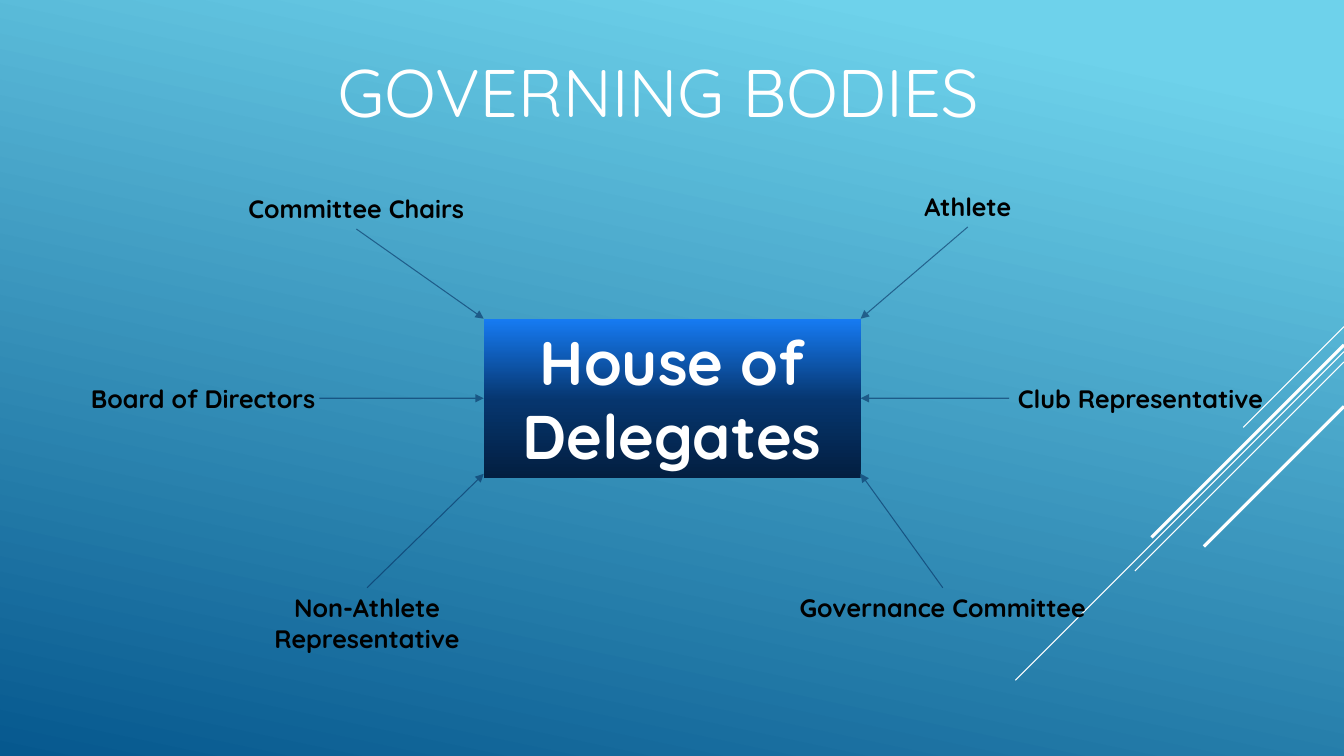
from copy import deepcopy

from pptx import Presentation
from pptx.dml.color import RGBColor
from pptx.enum import shapes, text
from pptx.oxml.ns import qn
from pptx.oxml.xmlchemy import OxmlElement
from pptx.util import Cm, Pt

FONT = "Quicksand"
WHITE = RGBColor(0xFF, 0xFF, 0xFF)
BLACK = RGBColor(0x00, 0x00, 0x00)
NAVY = RGBColor(0x05, 0x2F, 0x61)
SKY = [(0.1, RGBColor(0x6E, 0xD2, 0xEB)), (1, RGBColor(0x06, 0x58, 0x8E))]
HUB_BLUES = [(0, RGBColor(0x03, 0x1F, 0x41)), (0.48, RGBColor(0x06, 0x35, 0x6D)),
             (1, RGBColor(0x16, 0x7B, 0xF3))]
WIDTH, HEIGHT = 33.87, 19.05
LABEL_HEIGHT = 1.02
TOP, LEFT, BOTTOM, RIGHT = range(4)  # connection sites of a rectangle


def set_gradient(fill, element, stops, angle):
    """Fill with any number of (position, colour) stops; element holds the fill."""
    fill.gradient()
    fill.gradient_angle = angle
    stop_list = next(element.iter(qn("a:gsLst")))
    for _ in stops[2:]:
        stop_list.append(deepcopy(stop_list[-1]))
    for stop, (position, colour) in zip(fill.gradient_stops, stops):
        stop.position = position
        stop.color.rgb = colour


def write(tf, words, size, colour, bold=False):
    tf.word_wrap = True
    p = tf.paragraphs[0]
    p.text = words
    p.alignment = text.PP_ALIGN.CENTER
    p.font.name, p.font.size, p.font.bold = FONT, Pt(size), bold
    p.font.color.rgb = colour


def add_line(s, start, end, colour, width):
    points = [Cm(v) for v in (*start, *end)]
    line = s.shapes.add_connector(shapes.MSO_CONNECTOR.STRAIGHT, *points)
    line.line.width = Pt(width)
    line.line.color.rgb = colour
    line._element.spPr.append(OxmlElement("a:effectLst"))
    return line


def add_arrow(s, start, end):
    """Draw a 60 % opaque line with an arrowhead at its end."""
    arrow = add_line(s, start, end, NAVY, 0.75)
    ln = arrow.line._get_or_add_ln()
    alpha = OxmlElement("a:alpha")
    alpha.set("val", "60000")
    next(ln.iter(qn("a:srgbClr"))).append(alpha)
    head = OxmlElement("a:tailEnd")
    head.set("type", "triangle")
    ln.append(head)
    return arrow


def add_stripes(s, right):
    """Draw 45° stripes running down and left from the right edge."""
    for y, run, width in [(8.23, 2.54, 0.75), (8.86, 8.28, 0.75), (9.12, 5.27, 0.75),
                          (8.69, 4.85, 2.25), (10.24, 3.53, 2.25)]:
        add_line(s, (right, y), (right - run, y + run), WHITE, width)


def add_title(s, x, y, w, h):
    title = s.shapes.title
    title.left, title.top, title.width, title.height = Cm(x), Cm(y), Cm(w), Cm(h)
    title.text_frame.vertical_anchor = text.MSO_ANCHOR.MIDDLE
    write(title.text_frame, "GOVERNING BODIES", 48, WHITE)


def add_label(s, words, centre, y, w):
    label = s.shapes.add_textbox(Cm(centre - w / 2), Cm(y), Cm(w), Cm(LABEL_HEIGHT))
    write(label.text_frame, words, 18, BLACK, bold=True)
    label.text_frame.auto_size = text.MSO_AUTO_SIZE.SHAPE_TO_FIT_TEXT
    return label


def add_hub(s, x, y, w, h):
    hub = s.shapes.add_shape(shapes.MSO_SHAPE.RECTANGLE, Cm(x), Cm(y), Cm(w), Cm(h))
    hub.shadow.inherit = False
    hub.line.fill.background()
    set_gradient(hub.fill, hub._element, HUB_BLUES, 90)
    hub.text_frame.vertical_anchor = text.MSO_ANCHOR.MIDDLE
    write(hub.text_frame, "House of Delegates", 44, WHITE, bold=True)
    return hub


def add_governing_diagram(s, x, y, w, h):
    """Place the hub in the given box, with the bodies that feed it around it."""
    hub = add_hub(s, x, y, w, h)
    right, middle, low = x + w, y + h / 2, y + h - 0.1

    for words, centre, top, width, site, corner in [
            ("Committee Chairs", x - 3.21, y - 3.28, 7.7, BOTTOM, (x, y)),
            ("Athlete", right + 2.7, y - 3.33, 7.7, BOTTOM, (right, y)),
            ("Non-Athlete Representative", x - 2.94, y + 6.78, 8, TOP, (x, low)),
            ("Governance Committee", right + 2.07, y + 6.78, 8.5, TOP, (right, low))]:
        label = add_label(s, words, centre, top, width)
        add_arrow(s, (centre, top), corner).begin_connect(label, site)

    for words, centre, start, side, site in [
            ("Board of Directors", x - 7.07, x - 4.14, x, LEFT),
            ("Club Representative", right + 7.05, right + 3.74, right, RIGHT)]:
        add_label(s, words, centre, middle - LABEL_HEIGHT / 2, 7.7)
        add_arrow(s, (start, middle), (side, middle)).end_connect(hub, site)


def main():
    prs = Presentation()
    prs.slide_width, prs.slide_height = Cm(WIDTH), Cm(HEIGHT)
    s = prs.slides.add_slide(prs.slide_layouts[5])
    set_gradient(s.background.fill, s.element, SKY, 258)
    add_stripes(s, WIDTH)
    add_title(s, 5.16, 0.46, 22.86, 3.66)
    add_governing_diagram(s, 12.19, 8.03, 9.5, 4.01)
    prs.save("out.pptx")


if __name__ == "__main__":
    main()
